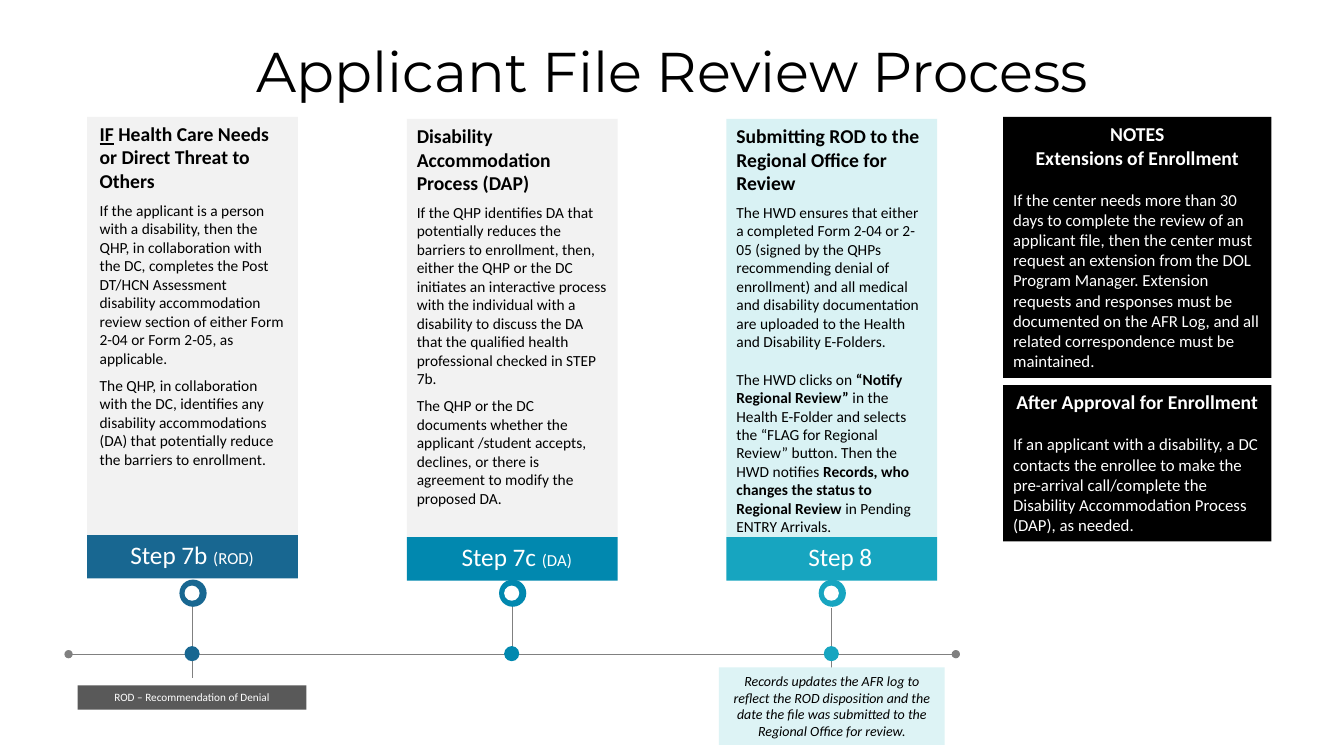
from lxml import etree
from pptx import Presentation
from pptx.dml.color import RGBColor
from pptx.enum import shapes, text
from pptx.oxml import ns
from pptx.util import Inches, Pt

BLACK = RGBColor(0, 0, 0)
WHITE = RGBColor(255, 255, 255)
GREY = RGBColor(0x80, 0x80, 0x80)
DARK_GREY = RGBColor(0x59, 0x59, 0x59)
LIGHT_GREY = RGBColor(0xF2, 0xF2, 0xF2)
PALE_TEAL = RGBColor(0xD9, 0xF2, 0xF4)
CALLOUT_TEAL = RGBColor(0xDD, 0xF3, 0xF5)
NAVY = RGBColor(0x18, 0x67, 0x91)
BLUE = RGBColor(0x01, 0x88, 0xAF)
TEAL = RGBColor(0x17, 0xA5, 0xC0)
RECTANGLE = shapes.MSO_SHAPE.RECTANGLE
OVAL = shapes.MSO_SHAPE.OVAL
LEFT, CENTER = text.PP_ALIGN.LEFT, text.PP_ALIGN.CENTER

COLUMN_PITCH = 3.17
FIRST_CENTER = 1.91
CARD_WIDTH, CARD_HEIGHT = 2.09, 4.15
AXIS_Y = 6.49

COLUMNS = [
    dict(top=1.16, color=NAVY, card=LIGHT_GREY, label_left=1.0, stem=(5.97, 6.73),
         text_box=(0.89, 1.16, 2.04, 3.57), step=[("Step 7b ", 18), ("(ROD)", 12)],
         title=[("IF", "bu"), (" Health Care Needs or Direct Threat to Others", "b")],
         body=[
             ([("If the applicant is a person with a disability, then the QHP, in collaboration "
                "with the DC, completes the Post DT/HCN Assessment disability accommodation "
                "review section of either Form 2-04 or Form 2-05, as applicable.", "")], 6),
             ([("The QHP, in collaboration with the DC, identifies any disability "
                "accommodations (DA) that potentially reduce the barriers to enrollment.", "")], 6)]),
    dict(top=1.18, color=BLUE, card=LIGHT_GREY, label_left=4.22, stem=(5.77, 6.47),
         text_box=None, step=[("Step 7c ", 18), ("(DA)", 12)],
         title=[("Disability Accommodation Process (DAP)", "b")],
         body=[
             ([("If the QHP identifies DA that potentially reduces the barriers to enrollment, "
                "then, either the QHP or the DC initiates an interactive process with the "
                "individual with a disability to discuss the DA that the qualified health "
                "professional checked in STEP 7b.", "")], 6),
             ([("The QHP or the DC documents whether the applicant /student accepts, declines, "
                "or there is agreement to modify the proposed DA.", "")], 6)]),
    dict(top=1.18, color=TEAL, card=PALE_TEAL, label_left=7.43, stem=(6.03, 6.73),
         text_box=None, step=[("Step 8", 18)],
         title=[("Submitting ROD to the Regional Office for Review", "b")],
         body=[
             ([("The HWD ensures that either a completed Form 2-04 or 2-05 (signed by the QHPs "
                "recommending denial of enrollment) and all medical and disability "
                "documentation are uploaded to the Health and Disability E-Folders.", "")], 6),
             ([("The HWD clicks on ", ""), ("“Notify Regional Review” ", "b"),
               ("in the Health E-Folder and selects the “FLAG for Regional Review” button. "
                "Then the HWD notifies ", ""),
               ("Records, who changes the status to Regional Review", "b"),
               (" in Pending ENTRY Arrivals.", "")], 13.4)]),
]

NOTES = [
    ((9.95, 1.16, 2.66, 2.59), ["NOTES", "Extensions of Enrollment"],
     "If the center needs more than 30 days to complete the review of an applicant file, then "
     "the center must request an extension from the DOL Program Manager. Extension requests and "
     "responses must be documented on the AFR Log, and all related correspondence must be "
     "maintained."),
    ((9.95, 3.82, 2.66, 1.55), ["After Approval for Enrollment"],
     "If an applicant with a disability, a DC contacts the enrollee to make the pre-arrival "
     "call/complete the Disability Accommodation Process (DAP), as needed."),
]


def add_filled(parent, kind, box, color):
    shape = parent.add_shape(kind, *map(Inches, box))
    shape.shadow.inherit = False
    shape.fill.solid()
    shape.fill.fore_color.rgb = color
    shape.line.fill.background()
    return shape


def add_text_box(slide, box):
    return slide.shapes.add_textbox(*map(Inches, box))


def add_line(slide, start, end, oval_ends=False):
    line = slide.shapes.add_connector(
        shapes.MSO_CONNECTOR.STRAIGHT, *map(Inches, (*start, *end)))
    line.line.color.rgb = GREY
    line.line.width = Pt(0.5)
    properties = line.line._get_or_add_ln()
    if oval_ends:
        for end_name in ("a:headEnd", "a:tailEnd"):
            etree.SubElement(properties, ns.qn(end_name), type="oval")
    etree.SubElement(properties.getparent(), ns.qn("a:effectLst"))


def write(shape, paragraphs, color=BLACK, font="Calibri"):
    frame = shape.text_frame
    frame.word_wrap = True
    frame.vertical_anchor = text.MSO_ANCHOR.TOP
    for index, (runs, alignment, space_before) in enumerate(paragraphs):
        paragraph = frame.paragraphs[0] if index == 0 else frame.add_paragraph()
        paragraph.alignment = alignment
        paragraph.space_before = Pt(space_before)
        for words, size, style in runs:
            run = paragraph.add_run()
            run.text = words
            run.font.name = font
            run.font.size = Pt(size)
            run.font.color.rgb = color
            run.font.bold = "b" in style
            run.font.italic = "i" in style
            run.font.underline = "u" in style


def add_title(slide, box):
    write(add_text_box(slide, box),
          [([("Applicant File Review Process", 40, "")], CENTER, 0)], font="Montserrat")


def add_marker(slide, center, color):
    ring = slide.shapes.add_group_shape()
    add_filled(ring.shapes, OVAL, (center - 0.13, 5.75, 0.27, 0.27), color)
    add_filled(ring.shapes, OVAL, (center - 0.08, 5.81, 0.15, 0.15), WHITE)
    add_filled(slide.shapes, OVAL, (center - 0.08, AXIS_Y - 0.08, 0.15, 0.15), color)


def add_column(slide, center, column):
    left, top = center - CARD_WIDTH / 2, column["top"]
    banner_top = top + CARD_HEIGHT
    add_line(slide, *[(center, y) for y in column["stem"]])
    card = add_filled(slide.shapes, RECTANGLE, (left, top, CARD_WIDTH, CARD_HEIGHT), column["card"])
    holder = add_text_box(slide, column["text_box"]) if column["text_box"] else card
    paragraphs = [([(words, 14, style) for words, style in column["title"]], LEFT, 0)]
    paragraphs += [([(words, 11, style) for words, style in runs], LEFT, gap)
                   for runs, gap in column["body"]]
    write(holder, paragraphs)
    add_filled(slide.shapes, RECTANGLE, (left, banner_top, CARD_WIDTH, 0.43), column["color"])
    label = add_text_box(slide, (column["label_left"], banner_top - 0.01, 1.81, 0.4))
    write(label, [([(words, size, "") for words, size in column["step"]], CENTER, 0)], WHITE)
    add_marker(slide, center, column["color"])


def add_note(slide, box, headings, body):
    paragraphs = [([(heading, 14, "b")], CENTER, 0) for heading in headings]
    paragraphs.append(([(body, 12, "")], LEFT, 14.65))
    write(add_filled(slide.shapes, RECTANGLE, box, BLACK), paragraphs, WHITE)


def add_callout(slide, box, fill, color, words, size, style):
    write(add_filled(slide.shapes, RECTANGLE, box, fill),
          [([(words, size, style)], CENTER, 0)], color)


def main():
    presentation = Presentation()
    presentation.slide_width = Inches(13.33)
    presentation.slide_height = Inches(7.5)
    slide = presentation.slides.add_slide(presentation.slide_layouts[6])
    add_line(slide, (0.68, AXIS_Y), (9.48, AXIS_Y), oval_ends=True)
    for index, column in enumerate(COLUMNS):
        add_column(slide, FIRST_CENTER + index * COLUMN_PITCH, column)
    add_title(slide, (1.33, 0.31, 10.68, 0.77))
    for note in NOTES:
        add_note(slide, *note)
    add_callout(slide, (7.13, 6.62, 2.24, 0.77), CALLOUT_TEAL, BLACK,
                "Records updates the AFR log to reflect the ROD disposition and the date the "
                "file was submitted to the Regional Office for review.", 10, "i")
    add_callout(slide, (0.77, 6.8, 2.27, 0.24), DARK_GREY, WHITE,
                "ROD – Recommendation of Denial", 8, "")
    presentation.save("out.pptx")


if __name__ == "__main__":
    main()
